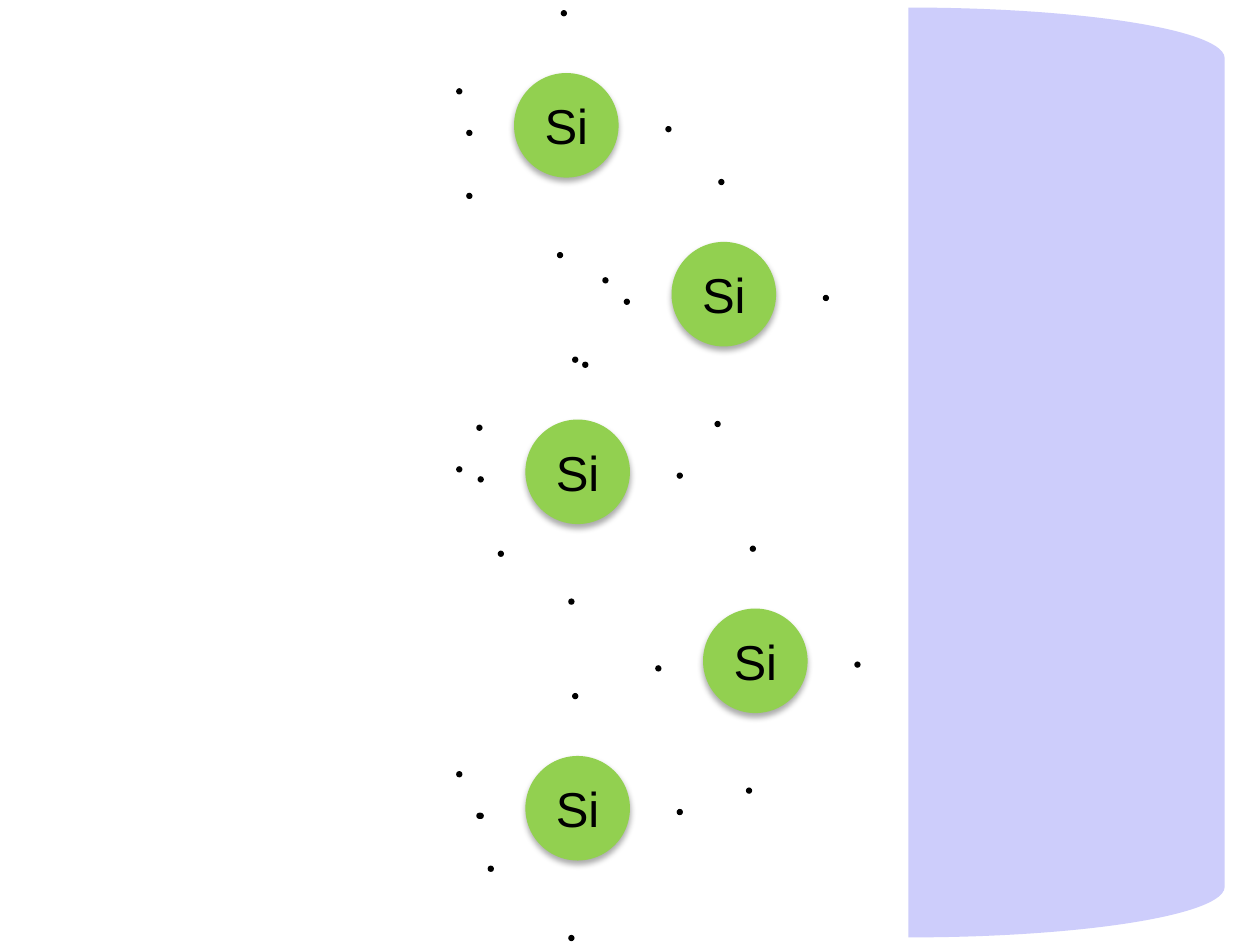
from lxml import etree
from pptx import Presentation
from pptx.dml.color import RGBColor
from pptx.enum import shapes, text
from pptx.oxml import ns
from pptx.util import Inches, Pt

COLORS = {"atom": "92D050", "ink": "000000", "panel": "CDCDFB"}
ATOM_SIZE = 0.83
ELECTRON_SIZE = 0.05
ATOMS = [(4.08, 0.58), (5.33, 1.92), (4.17, 3.33), (5.58, 4.83), (4.17, 6)]
# Top, right, bottom and left electron, measured from the atom's corner
VALENCE_OFFSETS = [(0.37, -0.5), (1.2, 0.42), (0.34, 1.42), (-0.38, 0.45)]
FREE_ELECTRONS = [
    (4.62, 2.87), (3.62, 0.7), (3.62, 6.12), (3.78, 6.45), (3.87, 6.87),
    (3.95, 4.37), (3.78, 3.37), (3.62, 3.7), (3.7, 1.53), (4.78, 2.2),
]


def add_filled(page, kind, left, top, width, height, color):
    """Add a borderless preset shape with a solid fill and no shadow."""
    shape = page.shapes.add_shape(
        kind, Inches(left), Inches(top), Inches(width), Inches(height))
    shape.shadow.inherit = False
    shape.fill.solid()
    shape.fill.fore_color.rgb = RGBColor.from_string(COLORS[color])
    shape.line.fill.background()
    return shape


def add_soft_shadow(shape):
    effects = shape._element.spPr.find(ns.qn("a:effectLst"))
    shadow = etree.SubElement(
        effects, ns.qn("a:outerShdw"), blurRad=str(Pt(3.5)),
        dist=str(Pt(2.2)), dir="5400000", rotWithShape="0")
    color = etree.SubElement(shadow, ns.qn("a:srgbClr"), val=COLORS["ink"])
    etree.SubElement(color, ns.qn("a:alpha"), val="32000")


def add_electron(page, left, top):
    add_filled(page, shapes.MSO_SHAPE.OVAL, left, top,
               ELECTRON_SIZE, ELECTRON_SIZE, "ink")


def add_atom(page, left, top):
    """Add a silicon atom with its four valence electrons."""
    atom = add_filled(page, shapes.MSO_SHAPE.OVAL, left, top,
                      ATOM_SIZE, ATOM_SIZE, "atom")
    add_soft_shadow(atom)
    frame = atom.text_frame
    frame_format = {
        "margin_left": 0, "margin_right": 0, "word_wrap": True,
        "vertical_anchor": text.MSO_ANCHOR.MIDDLE,
    }
    for name, value in frame_format.items():
        setattr(frame, name, value)
    para = frame.paragraphs[0]
    para.alignment = text.PP_ALIGN.CENTER
    span = para.add_run()
    span.text = "Si"
    for name, value in {"name": "Arial", "size": Pt(28)}.items():
        setattr(span.font, name, value)
    span.font.color.rgb = RGBColor.from_string(COLORS["ink"])
    for across, down in VALENCE_OFFSETS:
        add_electron(page, left + across, top + down)


def add_panel(page):
    panel = add_filled(page, shapes.MSO_SHAPE.RIGHT_BRACKET,
                       7.21, 0.06, 2.51, 7.38, "panel")
    panel.adjustments[0] = 0.16


def main():
    deck = Presentation()
    deck.slide_width, deck.slide_height = Inches(10), Inches(7.5)
    page = deck.slides.add_slide(deck.slide_layouts[6])
    for left, top in ATOMS:
        add_atom(page, left, top)
    add_panel(page)
    for left, top in FREE_ELECTRONS:
        add_electron(page, left, top)
    deck.save("out.pptx")


if __name__ == "__main__":
    main()
